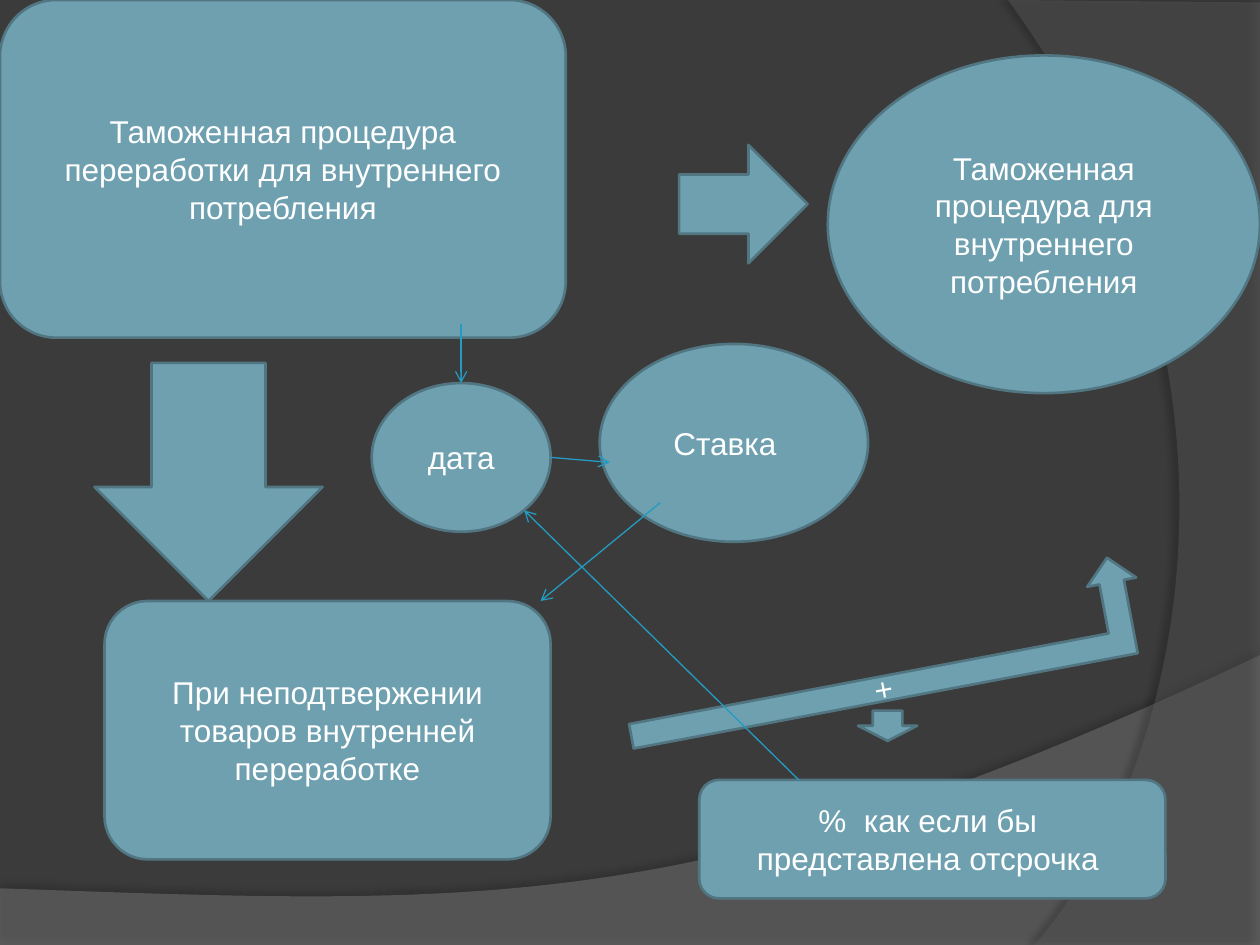
"""Build a slide showing customs procedure flows on a dark curved background."""
from lxml import etree
from pptx import Presentation
from pptx.dml.color import RGBColor
from pptx.enum.shapes import MSO_CONNECTOR, MSO_SHAPE
from pptx.enum.text import MSO_ANCHOR, PP_ALIGN
from pptx.oxml.ns import qn
from pptx.util import Inches, Pt

ROUND, OVAL = MSO_SHAPE.ROUNDED_RECTANGLE, MSO_SHAPE.OVAL
RIGHT, DOWN, BENT = MSO_SHAPE.RIGHT_ARROW, MSO_SHAPE.DOWN_ARROW, MSO_SHAPE.BENT_UP_ARROW
STRAIGHT = MSO_CONNECTOR.STRAIGHT
CENTER, MIDDLE = PP_ALIGN.CENTER, MSO_ANCHOR.MIDDLE

DARK = RGBColor(0x3B, 0x3B, 0x3B)
LIGHT_GRAY = RGBColor(0x7F, 0x7F, 0x7F)
MID_GRAY = RGBColor(0x5E, 0x5E, 0x5E)
TEAL = RGBColor(0x6E, 0xA0, 0xB0)
OUTLINE = RGBColor(0x51, 0x76, 0x82)
ARROW_BLUE = RGBColor(0x23, 0x9B, 0xC2)
WHITE = RGBColor(0xFF, 0xFF, 0xFF)
FONT = "Arial"

WAVES = [
    dict(corners=[(0, 7.05), (0, 7.5), (10, 7.5), (10, 5.2)],
         curve=[(5.59, 7.29), (3.91, 7.19), (0, 7.05)],
         color=LIGHT_GRAY, opacity=45, shadow_opacity=35, distance=3.5, direction=270),
    dict(corners=[(8, 0), (10, 0.02), (10, 7.5), (8.21, 7.5)],
         curve=[(9.35, 6.19), (10.18, 3), (8, 0)],
         color=MID_GRAY, opacity=40, shadow_opacity=45, distance=4, direction=180),
]

BLOCKS = [
    ("processing", ROUND, (0, 0, 4.49, 2.68),
     "Таможенная процедура переработки для внутреннего потребления", {}),
    ("to consumption", RIGHT, (5.39, 1.15, 1.02, 0.94), "", {}),
    ("consumption", OVAL, (6.57, 0.44, 3.43, 2.68),
     "Таможенная процедура для внутреннего потребления", {}),
    ("to unconfirmed", DOWN, (0.75, 2.88, 1.81, 1.89), "", {}),
    ("unconfirmed", ROUND, (0.83, 4.77, 3.54, 2.05),
     "При неподтвержении товаров внутренней переработке", {}),
    ("plus", BENT, (4.92, 4.77, 4.17, 0.79), "+", dict(rotation=349.3)),
    ("to interest", DOWN, (6.81, 5.64, 0.47, 0.24), "", {}),
    ("interest", ROUND, (5.55, 6.19, 3.7, 0.94),
     "%  как если бы представлена отсрочка", dict(right_inset=0.17)),
    ("rate", OVAL, (4.76, 2.73, 2.13, 1.57), "Ставка", dict(right_inset=0.24)),
    ("date", OVAL, (2.95, 3.04, 1.42, 1.18), "дата", {}),
]

LINKS = [
    ((5.24, 3.99), (4.29, 4.77), None),
    ((3.66, 2.57), (3.66, 3.04), "date"),
    ((4.37, 3.63), (4.84, 3.67), None),
    ((6.34, 6.19), (4.16, 4.05), None),
]


def add_child(parent, tag, **attributes):
    return etree.SubElement(parent, qn(tag), {key: str(value) for key, value in attributes.items()})


def add_wave(slide, corners, curve, color, opacity, shadow_opacity, distance, direction):
    points = [(Inches(x), Inches(y)) for x, y in corners]
    builder = slide.shapes.build_freeform(*points[0], scale=1.0)
    builder.add_line_segments(points[1:], close=True)
    shape = builder.convert_to_shape()
    shape.fill.solid()
    shape.fill.fore_color.rgb = color
    shape.line.fill.background()
    properties = shape._element.spPr
    bend = etree.Element(qn("a:cubicBezTo"))
    for x, y in curve:
        add_child(bend, "a:pt", x=Inches(x) - shape.left, y=Inches(y) - shape.top)
    next(properties.iter(qn("a:close"))).addprevious(bend)
    add_child(properties.find(qn("a:solidFill"))[0], "a:alpha", val=opacity * 1000)
    shadow = add_child(add_child(properties, "a:effectLst"), "a:outerShdw", blurRad=Pt(4),
                       dist=Pt(distance), dir=direction * 60000, algn="ctr", rotWithShape=0)
    add_child(add_child(shadow, "a:srgbClr", val="000000"), "a:alpha", val=shadow_opacity * 1000)


def write_text(shape, text, size=18, color=WHITE, right_inset=0.1):
    frame = shape.text_frame
    frame.word_wrap = True
    frame.vertical_anchor = MIDDLE
    frame.margin_right = Inches(right_inset)
    paragraph = frame.paragraphs[0]
    paragraph.text = text
    paragraph.alignment = CENTER
    font = paragraph.runs[0].font
    font.name, font.size = FONT, Pt(size)
    font.color.rgb = color


def add_block(slide, kind, box, text, rotation=0, **text_format):
    shape = slide.shapes.add_shape(kind, *map(Inches, box))
    shape.rotation = rotation
    shape.shadow.inherit = False
    shape.fill.solid()
    shape.fill.fore_color.rgb = TEAL
    shape.line.color.rgb = OUTLINE
    shape.line.width = Pt(1.5)
    if text:
        write_text(shape, text, **text_format)
    return shape


def add_link(slide, start, end, target=None):
    connector = slide.shapes.add_connector(STRAIGHT, *map(Inches, start + end))
    if target is not None:
        connector.end_connect(target, 0)
    connector.line.color.rgb = ARROW_BLUE
    connector.line.width = Pt(0.75)
    add_child(connector.line._get_or_add_ln(), "a:tailEnd", type="arrow")
    add_child(connector._element.spPr, "a:effectLst")


def main():
    presentation = Presentation()
    presentation.slide_width, presentation.slide_height = Inches(10), Inches(7.5)
    slide = presentation.slides.add_slide(presentation.slide_layouts[6])
    slide.background.fill.solid()
    slide.background.fill.fore_color.rgb = DARK
    for wave in WAVES:
        add_wave(slide, **wave)
    blocks = {}
    for name, kind, box, text, options in BLOCKS:
        blocks[name] = add_block(slide, kind, box, text, **options)
    for start, end, target in LINKS:
        add_link(slide, start, end, blocks.get(target))
    presentation.save("out.pptx")


if __name__ == "__main__":
    main()
